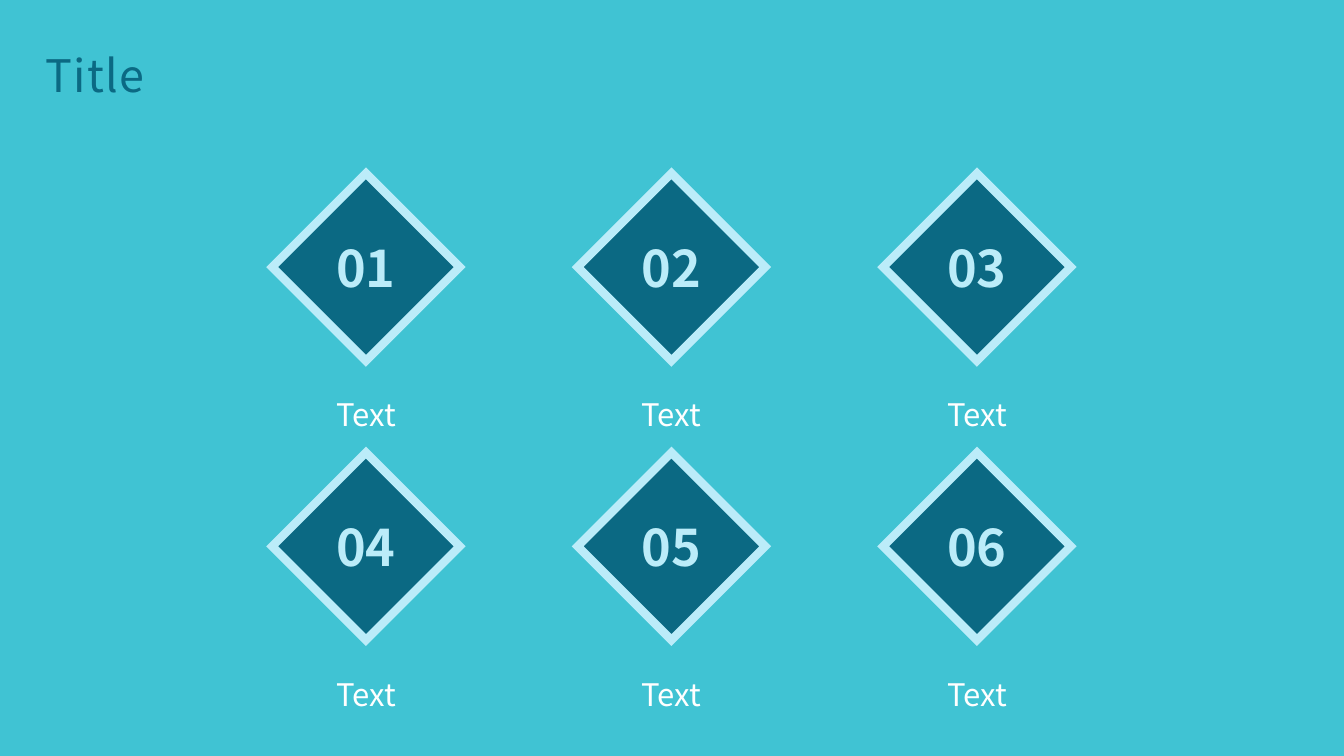
from dataclasses import dataclass

from lxml.etree import SubElement
from pptx import Presentation
from pptx.dml.color import RGBColor
from pptx.enum.shapes import MSO_SHAPE as Shape
from pptx.enum.text import MSO_ANCHOR as Anchor, MSO_AUTO_SIZE as AutoSize, PP_ALIGN as Align
from pptx.oxml.ns import qn
from pptx.slide import Slide
from pptx.text.text import TextFrame
from pptx.util import Inches, Pt

FONT = "Noto Sans CJK JP"
COLOURS = {
    "background": "40C3D3",
    "deep": "0B6983",
    "pale": "BBECF9",
    "white": "FFFFFF",
}

# Grid of numbered diamonds, in inches
COLUMNS, ROWS = 3, 2
LEFT, TOP = 2.7, 1.72
COLUMN_STEP, ROW_STEP = 3.03, 2.77
DIAMOND_SIZE = 1.86
LABEL_WIDTH, LABEL_HEIGHT, LABEL_DROP = 2.53, 0.63, 2.01


@dataclass(frozen=True)
class Step:
    number: str
    label: str
    left: float
    top: float


def colour(name: str) -> RGBColor:
    return RGBColor.from_string(COLOURS[name])


def write(frame: TextFrame, text: str, size: float, colour_name: str, align: Align,
          spacing: float = 1.0, bold: bool = False) -> None:
    frame.text = text
    para = frame.paragraphs[0]
    para.alignment = align
    para.line_spacing = spacing
    font = para.runs[0].font
    font.name = FONT
    font.size = Pt(size)
    font.bold = bold
    font.color.rgb = colour(colour_name)


def draw_title(slide: Slide, text: str) -> None:
    title = slide.shapes.title
    title.left, title.top = Inches(0.35), Inches(0.18)
    title.width, title.height = Inches(7.29), Inches(1.18)
    frame = title.text_frame
    frame.auto_size = AutoSize.NONE
    frame.vertical_anchor = Anchor.MIDDLE
    write(frame, text, 32, "deep", Align.LEFT, spacing=0.9)
    # Letter spacing of one point
    frame.paragraphs[0].runs[0].font._element.set("spc", "100")


def draw_step(slide: Slide, step: Step) -> None:
    group = slide.shapes.add_group_shape()

    # Label under the diamond
    label_left = step.left + (DIAMOND_SIZE - LABEL_WIDTH) / 2
    label = group.shapes.add_textbox(
        Inches(label_left), Inches(step.top + LABEL_DROP),
        Inches(LABEL_WIDTH), Inches(LABEL_HEIGHT))
    label.text_frame.word_wrap = True
    write(label.text_frame, step.label, 22.2, "white", Align.CENTER, spacing=1.4)

    # Diamond with its number
    diamond = group.shapes.add_shape(
        Shape.DIAMOND, Inches(step.left), Inches(step.top),
        Inches(DIAMOND_SIZE), Inches(DIAMOND_SIZE))
    diamond.shadow.inherit = False
    diamond.fill.solid()
    diamond.fill.fore_color.rgb = colour("deep")
    diamond.line.color.rgb = colour("pale")
    diamond.line.width = Pt(6)
    outline = diamond.line._get_or_add_ln()
    SubElement(outline, qn("a:miter"), lim="800000")
    frame = diamond.text_frame
    frame.word_wrap = False
    frame.vertical_anchor = Anchor.MIDDLE
    write(frame, step.number, 36, "pale", Align.CENTER, bold=True)


def main() -> None:
    deck = Presentation()
    deck.slide_width, deck.slide_height = Inches(13.33), Inches(7.5)
    page = deck.slides.add_slide(deck.slide_layouts[5])
    page.background.fill.solid()
    page.background.fill.fore_color.rgb = colour("background")

    draw_title(page, "Title")
    for index in range(COLUMNS * ROWS):
        row, column = divmod(index, COLUMNS)
        draw_step(page, Step(f"{index + 1:02d}", "Text",
                             LEFT + column * COLUMN_STEP, TOP + row * ROW_STEP))

    deck.save("out.pptx")


if __name__ == "__main__":
    main()
